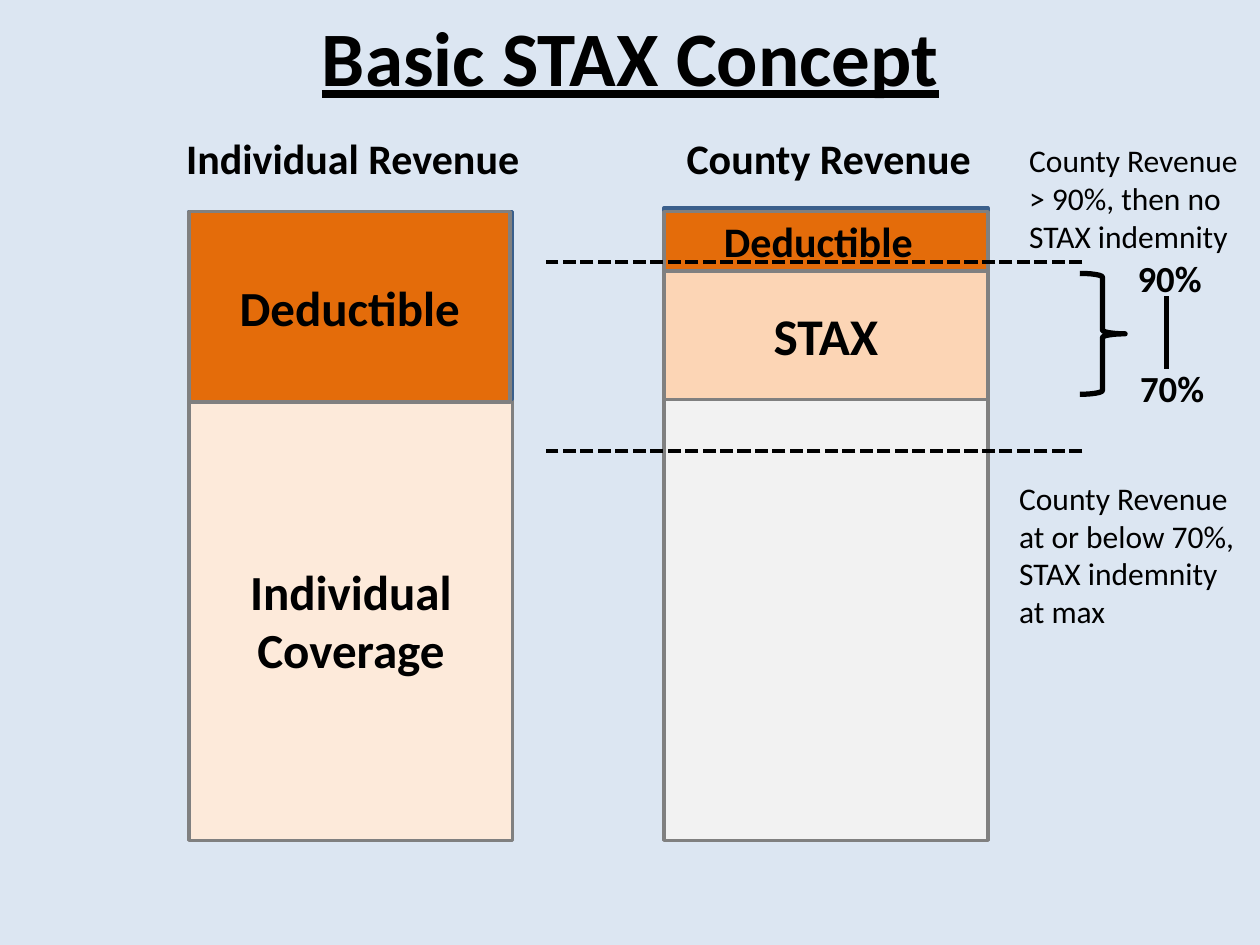
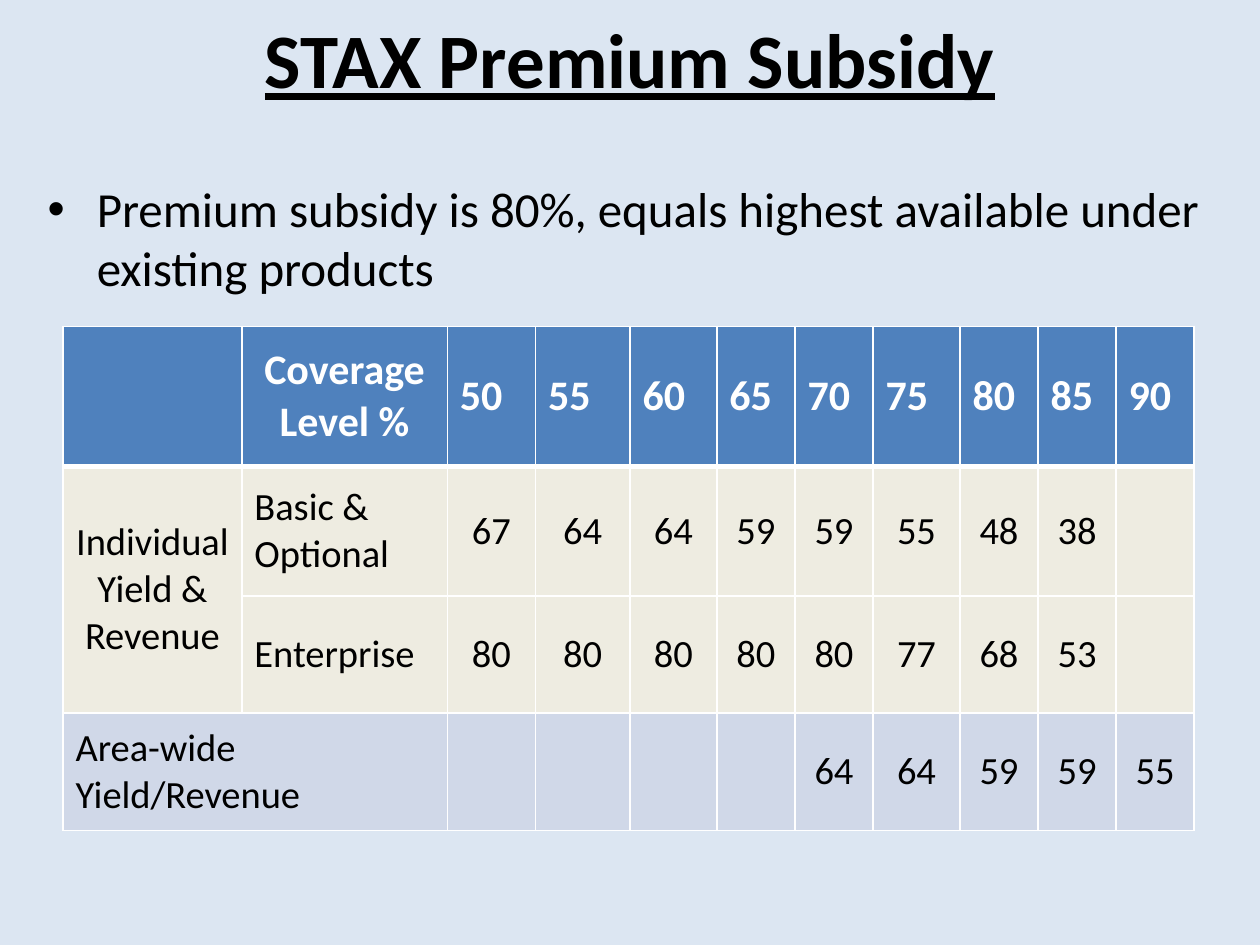
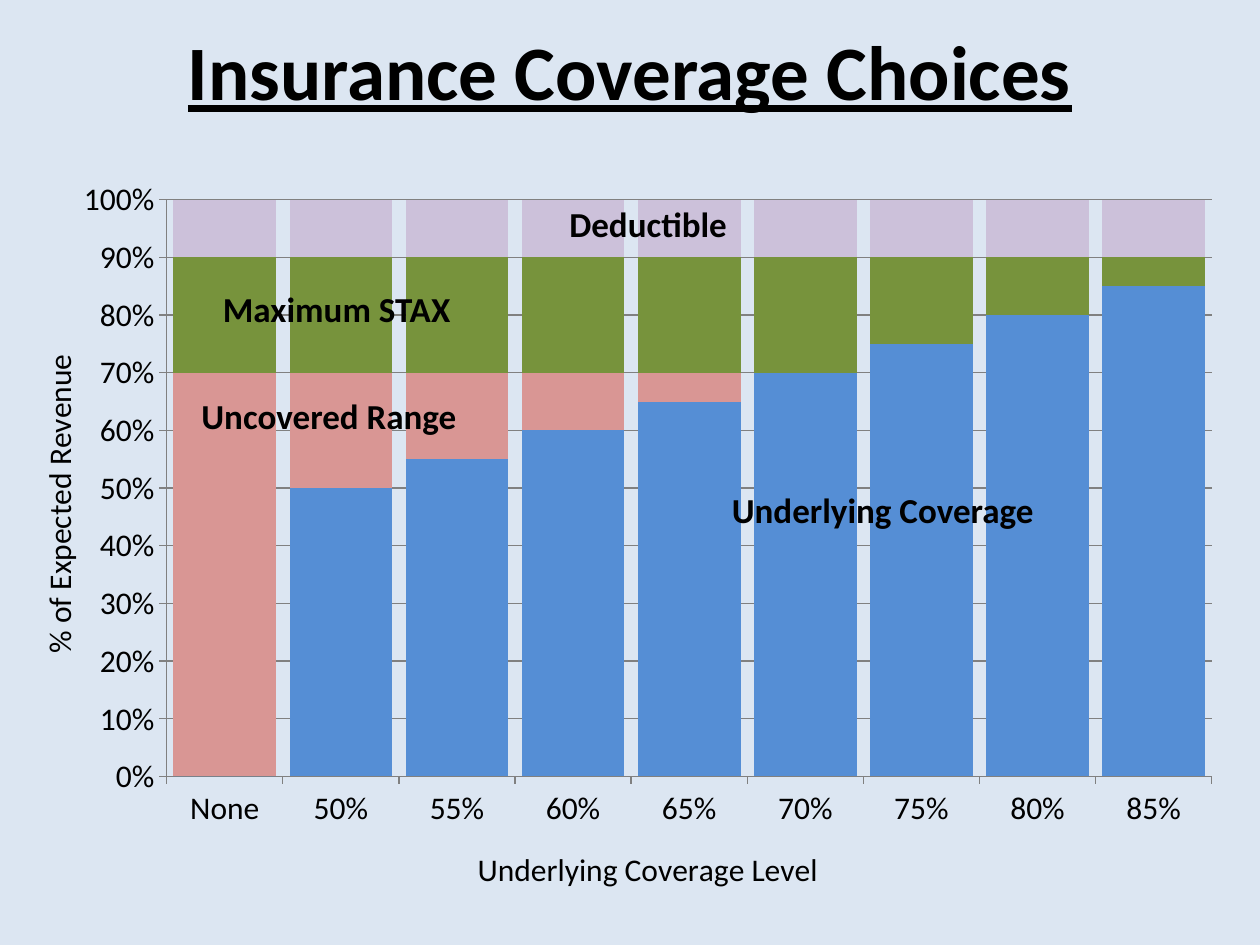
import lxml.etree
import pptx
import pptx.chart.data
import pptx.dml.color
import pptx.enum.chart
import pptx.enum.dml
import pptx.enum.shapes
import pptx.enum.text
import pptx.oxml.ns
import pptx.util

Inches = pptx.util.Inches
Pt = pptx.util.Pt
qn = pptx.oxml.ns.qn
Align = pptx.enum.text.PP_ALIGN
Anchor = pptx.enum.text.MSO_ANCHOR
Preset = pptx.enum.shapes.MSO_SHAPE

FONT = "Calibri"
BACKGROUND = "DCE6F2"
BLACK = "000000"
WHITE = "FFFFFF"
GRAY = "808080"
NAVY = "3A5F8C"
BLUE = "558ED5"
PALE_BLUE = "C6D9F1"
ORANGE = "E46C0A"


def color(value):
    return pptx.dml.color.RGBColor.from_string(value)


def add_element(parent, tag, **attributes):
    return lxml.etree.SubElement(parent, qn(tag), **attributes)


class Deck:
    """Holds the shared style and the current slide, and draws each kind of element."""

    def __init__(self):
        self.presentation = pptx.Presentation()
        self.presentation.slide_width = Inches(10)
        self.presentation.slide_height = Inches(7.5)
        self.slide = None

    def add_slide(self, title, left, top, width, height):
        self.slide = self.presentation.slides.add_slide(self.presentation.slide_layouts[6])
        fill = self.slide.background.fill
        fill.solid()
        fill.fore_color.rgb = color(BACKGROUND)
        box = self.text(title, left, top, width, height, 44, bold=True, align=Align.CENTER)
        box.text_frame.vertical_anchor = Anchor.MIDDLE
        box.text_frame.paragraphs[0].font.underline = True

    def style_font(self, font, size, bold=False, font_color=BLACK):
        font.name = FONT
        font.size = Pt(size)
        font.bold = bold
        font.color.rgb = color(font_color)

    def style_line(self, line, line_color, width):
        line.color.rgb = color(line_color)
        line.width = Pt(width)

    def set_text(self, frame, text, size, bold=False, align=Align.LEFT, font_color=BLACK):
        frame.text = text
        paragraph = frame.paragraphs[0]
        paragraph.alignment = align
        self.style_font(paragraph.font, size, bold, font_color)

    def text(self, text, left, top, width, height, size, bold=False, align=Align.LEFT, wrap=True):
        box = self.slide.shapes.add_textbox(Inches(left), Inches(top), Inches(width), Inches(height))
        box.text_frame.word_wrap = wrap
        self.set_text(box.text_frame, text, size, bold, align)
        return box

    def bullet(self, text, left, top, width, height, size, indent):
        box = self.text(text, left, top, width, height, size)
        properties = box.text_frame.paragraphs[0]._p.get_or_add_pPr()
        properties.set("marL", str(Inches(indent)))
        properties.set("indent", str(-Inches(indent)))
        bullet_font = lxml.etree.Element(qn("a:buFont"), typeface="Arial")
        bullet_mark = lxml.etree.Element(qn("a:buChar"), char="•")
        properties.insert(0, bullet_font)
        properties.insert(1, bullet_mark)

    def shape(self, left, top, width, height, fill=None, line=GRAY, line_width=2,
              preset=Preset.RECTANGLE, text="", size=28):
        shape = self.slide.shapes.add_shape(
            preset, Inches(left), Inches(top), Inches(width), Inches(height))
        shape.shadow.inherit = False
        if fill:
            shape.fill.solid()
            shape.fill.fore_color.rgb = color(fill)
        else:
            shape.fill.background()
        self.style_line(shape.line, line, line_width)
        if text:
            shape.text_frame.word_wrap = True
            shape.text_frame.vertical_anchor = Anchor.MIDDLE
            self.set_text(shape.text_frame, text, size, True, Align.CENTER)

    def line(self, start, end, width, dash=None):
        connector = self.slide.shapes.add_connector(
            pptx.enum.shapes.MSO_CONNECTOR.STRAIGHT, *map(Inches, start + end))
        self.style_line(connector.line, BLACK, width)
        if dash:
            connector.line.dash_style = dash
        add_element(connector._element.spPr, "a:effectLst")

    def table(self, left, top, column_widths, row_heights):
        frame = self.slide.shapes.add_table(
            len(row_heights), len(column_widths), Inches(left), Inches(top),
            Inches(sum(column_widths)), Inches(sum(row_heights)))
        table = frame.table
        for column, width in zip(table.columns, column_widths):
            column.width = Inches(width)
        for row, height in zip(table.rows, row_heights):
            row.height = Inches(height)
        return table

    def cell(self, cell, text, fill, size, bold, align, font_color, top_border, bottom_border):
        properties = cell._tc.get_or_add_tcPr()
        borders = {"a:lnL": 1, "a:lnR": 1, "a:lnT": top_border, "a:lnB": bottom_border}
        for tag, width in borders.items():
            border = add_element(properties, tag, w=str(Pt(width)))
            add_element(add_element(border, "a:solidFill"), "a:srgbClr", val=WHITE)
        cell.fill.solid()
        cell.fill.fore_color.rgb = color(fill)
        cell.vertical_anchor = Anchor.MIDDLE
        if text:
            self.set_text(cell.text_frame, text, size, bold, align, font_color)

    def stacked_columns(self, left, top, width, height, categories, series, plot):
        data = pptx.chart.data.CategoryChartData(number_format="0%")
        data.categories = categories
        for number, (values, _) in enumerate(series, 1):
            data.add_series(f"Series {number}", values)
        chart = self.slide.shapes.add_chart(
            pptx.enum.chart.XL_CHART_TYPE.COLUMN_STACKED, Inches(left), Inches(top),
            Inches(width), Inches(height), data).chart
        chart.has_legend = False
        chart.has_title = False
        self.style_font(chart.font, 18)
        columns = chart.plots[0]
        columns.gap_width = 13
        columns.overlap = 100
        columns.vary_by_categories = False
        for item, (_, fill) in zip(columns.series, series):
            item.format.fill.solid()
            item.format.fill.fore_color.rgb = color(fill)
        self.place_plot(chart, plot)
        return chart

    def place_plot(self, chart, plot):
        area = chart._chartSpace.chart.plotArea
        for layout in area.findall(qn("c:layout")):
            area.remove(layout)
        layout = lxml.etree.Element(qn("c:layout"))
        area.insert(0, layout)
        manual = add_element(layout, "c:manualLayout")
        add_element(manual, "c:layoutTarget", val="inner")
        for side in "xy":
            add_element(manual, f"c:{side}Mode", val="edge")
        for side, value in zip("xywh", plot):
            add_element(manual, f"c:{side}", val=str(value))
        add_element(add_element(area, "c:spPr"), "a:noFill")
        chart_fill = lxml.etree.Element(qn("c:spPr"))
        add_element(chart_fill, "a:noFill")
        add_element(add_element(chart_fill, "a:ln"), "a:noFill")
        chart._chartSpace.chart.addnext(chart_fill)

    def axis(self, axis, title):
        axis.has_title = True
        self.set_text(axis.axis_title.text_frame, title, 18, align=Align.CENTER)
        axis.major_tick_mark = pptx.enum.chart.XL_TICK_MARK.OUTSIDE
        axis.minor_tick_mark = pptx.enum.chart.XL_TICK_MARK.NONE
        self.style_font(axis.tick_labels.font, 18)
        self.style_line(axis.format.line, GRAY, 0.75)


def build_concept(deck):
    deck.add_slide("Basic STAX Concept", 0.28, 0, 9.45, 0.88)
    individual, county, width = 1.5, 5.27, 2.57

    deck.shape(county, 3.17, width, 3.5, "F2F2F2")
    deck.shape(county, 1.65, width, 0.26, PALE_BLUE, NAVY)
    deck.shape(county, 1.68, width, 1.49, ORANGE)
    deck.text("Deductible", 5.52, 1.66, 1.95, 0.5, 24, True, Align.CENTER)
    deck.shape(county, 2.15, width, 1.02, "FCD5B5", text="STAX", size=29.4)

    deck.shape(8.57, 2.17, 0.36, 0.96, line=BLACK, line_width=3, preset=Preset.RIGHT_BRACE)
    deck.text("90%", 8.93, 1.98, 0.99, 0.45, 21, True)
    deck.text("70%", 8.95, 2.85, 0.99, 0.45, 21, True)
    deck.line((9.26, 2.35), (9.26, 2.93), 2.75)

    deck.shape(individual, 3.17, width, 3.5, "FDEADA", text="Individual Coverage")
    deck.shape(individual, 1.94, width, 1.23, BLUE, NAVY)
    deck.shape(individual, 1.68, width, 0.26, PALE_BLUE, NAVY)
    deck.shape(individual, 1.68, 2.55, 1.51, ORANGE, text="Deductible")

    deck.text("Individual Revenue", 1.38, 1, 2.87, 0.5, 24, True, wrap=False)
    deck.text("County Revenue", 5.35, 1, 2.48, 0.5, 24, True, wrap=False)
    for threshold in (2.08, 3.58):
        deck.line((8.59, threshold), (4.33, threshold), 2.5, pptx.enum.dml.MSO_LINE.SQUARE_DOT)
    deck.text("County Revenue > 90%, then no STAX indemnity", 8.07, 1.07, 1.93, 1.01, 18)
    deck.text("County Revenue at or below 70%, STAX indemnity at max", 7.99, 3.75, 1.93, 1.31, 18)


def build_subsidy(deck):
    deck.add_slide("STAX Premium Subsidy", 0.5, 0, 9, 0.92)
    rows = [
        ["", "Coverage Level %", *range(50, 95, 5)],
        ["Individual Yield & Revenue", "Basic & Optional", 67, 64, 64, 59, 59, 55, 48, 38, ""],
        ["", "Enterprise", 80, 80, 80, 80, 80, 77, 68, 53, ""],
        ["Area-wide Yield/Revenue", "", "", "", "", "", 64, 64, 59, 59, 55],
    ]
    fills = ["4F81BD", "EEECE1", "EEECE1", "D0D8E8"]
    table = deck.table(0.5, 2.59, [1.42, 1.63, 0.7, 0.75, 0.69, 0.62, 0.62, 0.69, 0.62, 0.62, 0.62],
                       [1.11, 1.03, 0.93, 0.93])
    table.cell(1, 0).merge(table.cell(2, 0))
    table.cell(3, 0).merge(table.cell(3, 1))
    for row, (values, fill) in enumerate(zip(rows, fills)):
        header = row == 0
        for column, value in enumerate(values):
            label = column == 1 or (row, column) == (3, 0)
            align = Align.LEFT if label != header else Align.CENTER
            deck.cell(table.cell(row, column), str(value), fill, 24 if header else 22, header, align,
                      WHITE if header else BLACK, 3 if row == 1 else 1, 3 if header else 1)
    deck.bullet("Premium subsidy is 80%, equals highest available under existing products",
                0.28, 1.37, 9.62, 1.13, 28, 0.39)


def build_choices(deck):
    deck.add_slide("Insurance Coverage Choices", 0.5, 0.08, 9, 0.95)
    levels = [0, 50, 55, 60, 65, 70, 75, 80, 85]
    categories = ["None"] + [f"{level}%" for level in levels[1:]]
    series = [
        ([level / 100 for level in levels], BLUE),
        ([max(70 - level, 0) / 100 for level in levels], "D99694"),
        ([min(90 - level, 20) / 100 for level in levels], "77933C"),
        ([0.1] * len(levels), "CCC1DA"),
    ]
    chart = deck.stacked_columns(0.25, 1.25, 9.5, 6, categories, series, (0.113, 0.056, 0.873, 0.763))
    deck.axis(chart.category_axis, "Underlying Coverage Level")
    value_axis = chart.value_axis
    deck.axis(value_axis, "% of Expected Revenue")
    value_axis.minimum_scale = 0
    value_axis.maximum_scale = 1
    value_axis.major_unit = 0.1
    value_axis.tick_labels.number_format = "0%"
    value_axis.tick_labels.number_format_is_linked = False
    value_axis.has_major_gridlines = True
    deck.style_line(value_axis.major_gridlines.format.line, GRAY, 0.75)

    for label, left, top, width in [
        ("Underlying Coverage", 5.71, 3.83, 2.62),
        ("Uncovered Range", 1.5, 3.08, 2.25),
        ("Maximum STAX", 1.67, 2.23, 2.02),
        ("Deductible", 4.42, 1.56, 1.47),
    ]:
        deck.text(label, left, top, width, 0.44, 20, True, wrap=False)


def main():
    deck = Deck()
    build_concept(deck)
    build_subsidy(deck)
    build_choices(deck)
    deck.presentation.save("out.pptx")


if __name__ == "__main__":
    main()
